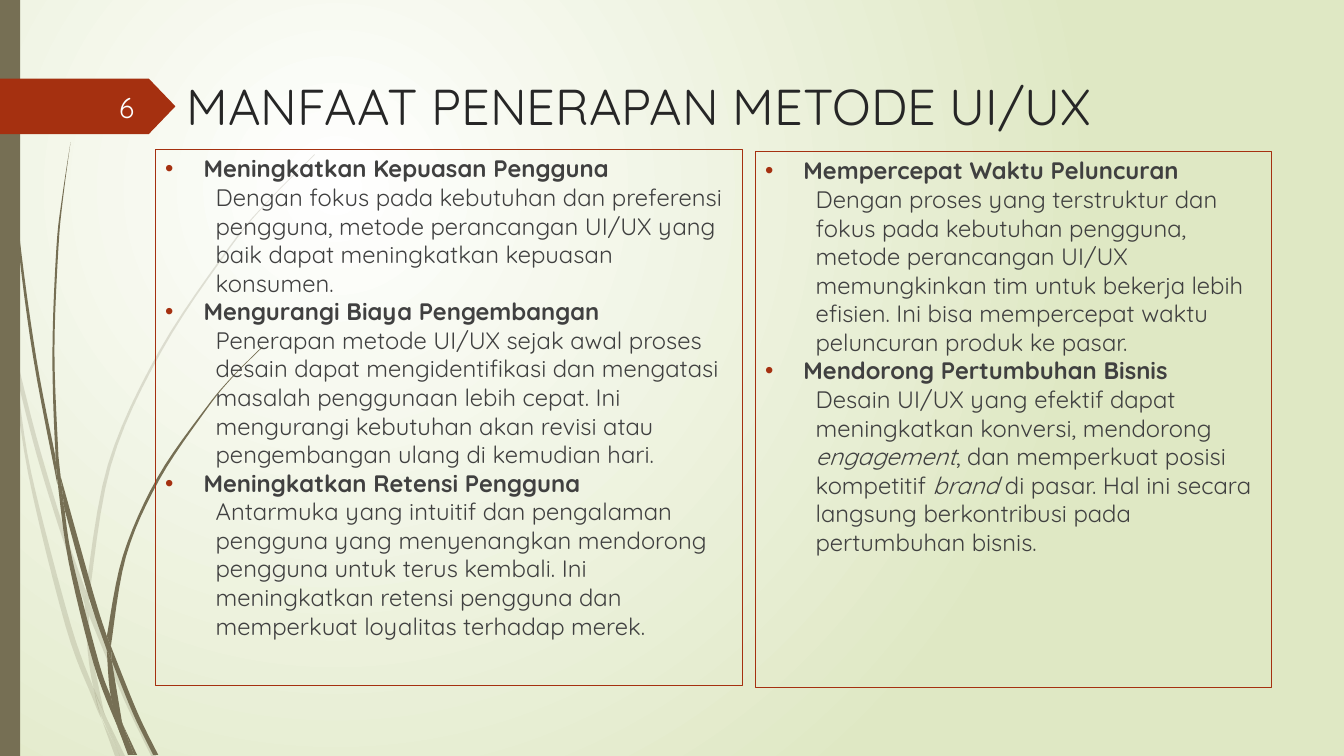
from dataclasses import dataclass

from lxml import etree
from pptx import Presentation, oxml
from pptx import util as u
from pptx.dml import color
from pptx.enum import shapes, text
from pptx.oxml import ns

PX = 9144  # one px is a hundredth of an inch
WIDE, HIGH = 1333, 750


@dataclass(frozen=True)
class Theme:
    font: str = "Quicksand"
    title: int = 36
    body: int = 17
    page: int = 20
    red: str = "A53010"
    olive: str = "766F54"
    dark: str = "262626"
    gray: str = "404040"
    white: str = "FEFFFF"
    glow: str = "FFFFFF"
    edge: str = "DFE8C4"


# Each blade of grass: one edge going down, then the other going back up.
FAINT = [
    ([(0, 282), (9, 322), (11, 350)], [(10, 344), (0, 299)]),
    ([(14, 345), (36, 433), (62, 520), (85, 586)], [(84, 599), (58, 522), (36, 450), (17, 376)]),
    ([(88, 596), (127, 692), (155, 750)], [(150, 750), (123, 694), (88, 610)]),
    ([(105, 711), (124, 750)], [(119, 750)]),
    ([(11, 350), (28, 470), (65, 621), (92, 693), (101, 714)],
     [(93, 683), (70, 619), (31, 469), (17, 376)]),
    ([(84, 599), (87, 646), (93, 683), (105, 711)], [(103, 706), (91, 646), (88, 610)]),
    ([(312, 153), (268, 197), (228, 244), (158, 348), (107, 461), (85, 586)],
     [(88, 596), (110, 462), (160, 349), (229, 245), (268, 198), (312, 154)]),
    ([(101, 714), (114, 750)], [(119, 750)]),
    ([(85, 586), (84, 599)], [(88, 610), (88, 596)]),
    ([(93, 683), (99, 707), (119, 750)], [(105, 711)]),
]
SOLID = [
    ([(3, 0), (7, 110), (17, 233), (33, 355), (57, 481)],
     [(55, 453), (36, 355), (19, 232), (8, 109), (4, 0)]),
    ([(60, 472), (93, 590), (106, 631)], [(106, 645), (88, 592), (64, 505)]),
    ([(110, 641), (136, 706), (157, 749)], [(152, 749), (132, 708), (111, 656)]),
    ([(57, 477), (68, 557), (93, 659), (117, 722)], [(110, 691), (98, 657), (72, 556), (64, 505)]),
    ([(70, 141), (62, 193), (56, 245), (52, 349), (55, 449), (60, 472)],
     [(58, 453), (54, 349), (58, 245), (63, 193), (70, 141)]),
    ([(122, 719), (136, 749)], [(133, 749)]),
    ([(55, 449), (57, 477), (64, 505)], [(60, 472)]),
    ([(260, 344), (231, 373), (204, 405), (156, 474), (122, 551), (106, 631)],
     [(110, 641), (125, 552), (158, 476), (205, 406), (231, 374), (261, 344)]),
    ([(117, 722), (127, 749)], [(131, 749)]),
    ([(106, 645), (110, 691), (122, 719)], [(121, 716), (111, 656)]),
    ([(106, 631), (106, 645)], [(111, 656), (110, 641)]),
    ([(110, 691), (117, 722), (130, 749)], [(133, 749), (122, 719)]),
]

# Each point: its heading, then runs that are upright and italic by turns.
LEFT = [
    ("Meningkatkan Kepuasan Pengguna",
     ["Dengan fokus pada kebutuhan dan preferensi pengguna, metode perancangan UI/UX "
      "yang baik dapat meningkatkan kepuasan konsumen."]),
    ("Mengurangi Biaya Pengembangan",
     ["Penerapan metode UI/UX sejak awal proses desain dapat mengidentifikasi dan mengatasi masalah "
      "penggunaan lebih cepat. Ini mengurangi kebutuhan akan revisi atau pengembangan ulang di kemudian hari."]),
    ("Meningkatkan Retensi Pengguna",
     ["Antarmuka yang intuitif dan pengalaman pengguna yang menyenangkan mendorong pengguna untuk terus "
      "kembali. Ini meningkatkan retensi pengguna dan memperkuat loyalitas terhadap merek."]),
]
RIGHT = [
    ("Mempercepat Waktu Peluncuran",
     ["Dengan proses yang terstruktur dan fokus pada kebutuhan pengguna, metode perancangan UI/UX "
      "memungkinkan tim untuk bekerja lebih efisien. Ini bisa mempercepat waktu peluncuran produk ke pasar."]),
    ("Mendorong Pertumbuhan Bisnis",
     ["Desain UI/UX yang efektif dapat meningkatkan konversi, mendorong ", "engagement",
      ", dan memperkuat posisi kompetitif ", "brand",
      " di pasar. Hal ini secara langsung berkontribusi pada pertumbuhan bisnis."]),
]


def scale(*px):
    return [u.Emu(round(n * PX)) for n in px]


def curve(knots, steps=6):
    """Points on a Catmull-Rom curve through the knots."""
    ends = [knots[0], *knots, knots[-1]]
    dots = []
    for a, b, c, d in zip(ends, ends[1:], ends[2:], ends[3:]):
        for t in (n / steps for n in range(steps)):
            dots.append(tuple(
                q + t * (r - p) / 2 + t * t * (2 * p - 5 * q + 4 * r - s) / 2
                + t ** 3 * (3 * q - p - 3 * r + s) / 2
                for p, q, r, s in zip(a, b, c, d)))
    return dots + [knots[-1]]


class Deck:
    def __init__(self, theme):
        self.theme = theme
        self.file = Presentation()
        self.file.slide_width, self.file.slide_height = scale(WIDE, HIGH)
        self.slide = self.file.slides.add_slide(self.file.slide_layouts[5])
        self.shapes = self.slide.shapes

    def back(self):
        """Radial glow centred in the upper left quarter."""
        fill = self.slide.background.fill
        fill.gradient()
        for stop, hue in zip(fill.gradient_stops, (self.theme.glow, self.theme.edge)):
            stop.color.rgb = color.RGBColor.from_string(hue)
        grad = self.slide.element.find(".//" + ns.qn("a:gradFill"))
        grad.replace(grad.find(ns.qn("a:lin")), oxml.parse_xml(
            f'<a:path {ns.nsdecls("a")} path="circle"><a:fillToRect l="50000" t="50000" '
            'r="100000" b="100000"/></a:path>'))

    def paint(self, shape, hue, alpha=100):
        shape.shadow.inherit = False
        shape.line.fill.background()
        shape.fill.solid()
        shape.fill.fore_color.rgb = color.RGBColor.from_string(hue)
        if alpha < 100:
            tone = shape.element.spPr.find(".//" + ns.qn("a:srgbClr"))
            etree.SubElement(tone, ns.qn("a:alpha"), val=str(alpha * 1000))

    def blade(self, down, rise, alpha):
        first, *rest = [scale(*dot) for dot in curve(down) + curve(rise)]
        pen = self.shapes.build_freeform(*first, scale=1.0)
        pen.add_line_segments(rest, close=True)
        self.paint(pen.convert_to_shape(), self.theme.olive, alpha)

    def block(self, kind, box, hue):
        shape = self.shapes.add_shape(kind, *scale(*box))
        self.paint(shape, hue)
        return shape

    def run(self, para, words, size, hue, bold=False, slant=False):
        run = para.add_run()
        run.text = words
        font = run.font
        font.name, font.size, font.bold, font.italic = self.theme.font, u.Pt(size), bold, slant
        font.color.rgb = color.RGBColor.from_string(hue)

    def frame(self, shape, anchor, align):
        frame = shape.text_frame
        frame.word_wrap = True
        frame.auto_size = text.MSO_AUTO_SIZE.NONE
        frame.vertical_anchor = anchor
        frame.paragraphs[0].alignment = align
        return frame

    def title(self, box, words):
        shape = self.shapes.title
        shape.left, shape.top, shape.width, shape.height = scale(*box)
        frame = self.frame(shape, text.MSO_ANCHOR.TOP, text.PP_ALIGN.LEFT)
        self.run(frame.paragraphs[0], words, self.theme.title, self.theme.dark)

    def page(self, box, words):
        shape = self.shapes.add_textbox(*scale(*box))
        frame = self.frame(shape, text.MSO_ANCHOR.MIDDLE, text.PP_ALIGN.RIGHT)
        self.run(frame.paragraphs[0], words, self.theme.page, self.theme.white)

    def indent(self, para, left, hang=0):
        """Set the left margin; a hanging first line gets a bullet."""
        para.alignment = text.PP_ALIGN.LEFT
        props = para._p.get_or_add_pPr()
        props.set("marL", str(left * PX))
        props.set("indent", str(-hang * PX))
        if hang:
            tint = etree.SubElement(props, ns.qn("a:buClr"))
            etree.SubElement(tint, ns.qn("a:srgbClr"), val=self.theme.red)
            etree.SubElement(props, ns.qn("a:buFont"), typeface="Arial")
            etree.SubElement(props, ns.qn("a:buChar"), char="•")

    def panel(self, box, points):
        look = self.theme
        shape = self.shapes.add_shape(shapes.MSO_SHAPE.RECTANGLE, *scale(*box))
        shape.shadow.inherit = False
        shape.fill.background()
        shape.line.color.rgb = color.RGBColor.from_string(look.red)
        shape.line.width = u.Pt(0.75)
        frame = self.frame(shape, text.MSO_ANCHOR.TOP, text.PP_ALIGN.LEFT)
        for n, (head, runs) in enumerate(points):
            top = frame.add_paragraph() if n else frame.paragraphs[0]
            sub = frame.add_paragraph()
            sub.level = 1
            self.indent(top, 38, 38)
            self.indent(sub, 50)
            self.run(top, head, look.body, look.gray, bold=True)
            for turn, words in enumerate(runs):
                self.run(sub, words, look.body, look.gray, slant=turn % 2 == 1)


def main():
    deck = Deck(Theme())
    deck.back()
    for blades, alpha in ((FAINT, 20), (SOLID, 100)):
        for down, rise in blades:
            deck.blade(down, rise, alpha)
    deck.block(shapes.MSO_SHAPE.RECTANGLE, (0, 0, 20, HIGH), deck.theme.olive)
    arrow = deck.block(shapes.MSO_SHAPE.PENTAGON, (0, 78, 174, 55), deck.theme.red)
    arrow.adjustments[0] = 0.48
    deck.title((175, 69, 1085, 140), "MANFAAT PENERAPAN METODE UI/UX")
    for box, points in (((154, 148, 582, 532), LEFT), ((749, 150, 512, 532), RIGHT)):
        deck.panel(box, points)
    deck.page((58, 86, 85, 40), "6")
    deck.file.save("out.pptx")


if __name__ == "__main__":
    main()
